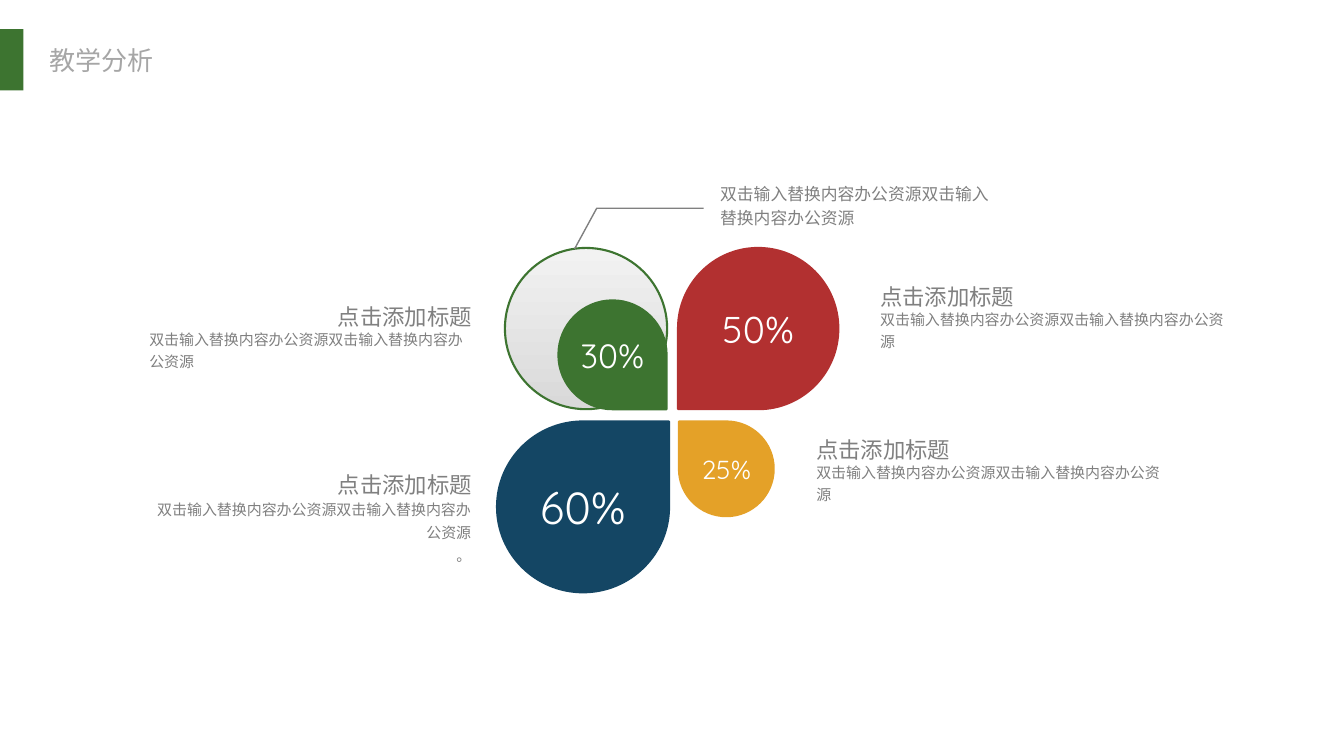
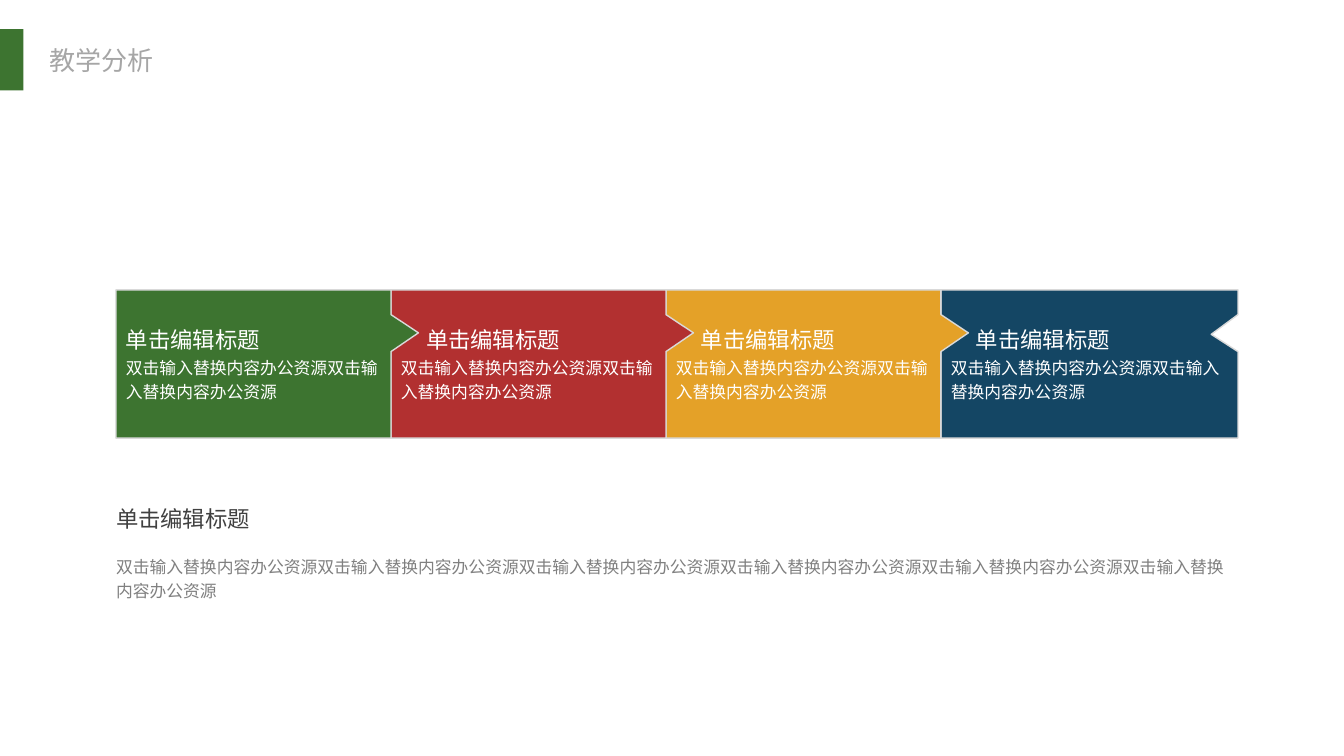
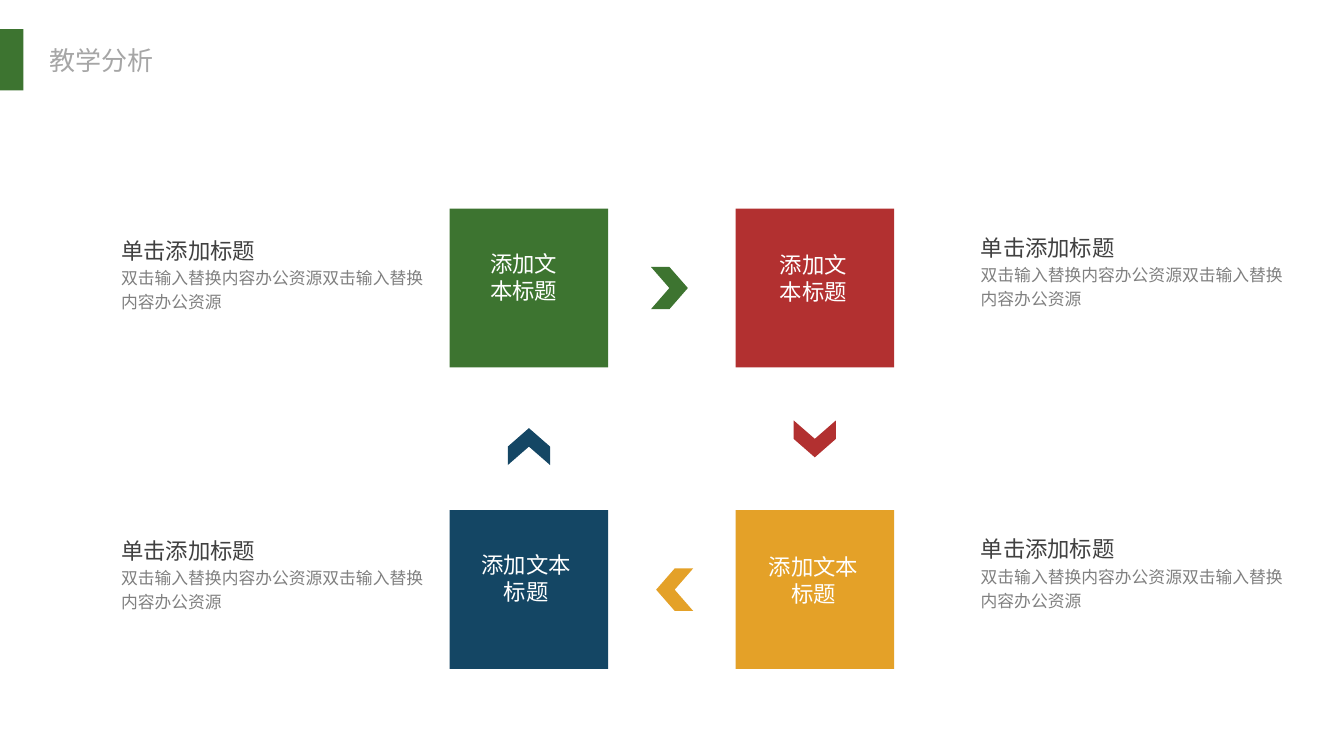
import math
from dataclasses import dataclass

from lxml import etree
from pptx import Presentation
from pptx import util as u
from pptx.dml import color as dml
from pptx.enum import shapes, text
from pptx.oxml import ns

WIDTH, HEIGHT = 40 / 3, 7.5
GREEN, RED, GOLD, NAVY = "3D7430", "B23030", "E4A128", "144664"
WHITE, SILVER, GREY, DARK, PALE = "FFFFFF", "A6A6A6", "808080", "404040", "D9D9D9"
SANS, FIGURES = "Noto Sans CJK SC", "Quicksand"
LEFT, CENTER, RIGHT = text.PP_ALIGN.LEFT, text.PP_ALIGN.CENTER, text.PP_ALIGN.RIGHT
JUSTIFY = text.PP_ALIGN.JUSTIFY
SHAPE = shapes.MSO_SHAPE
ROUNDNESS = 4 / 3 * (math.sqrt(2) - 1)
PHRASE = "双击输入替换内容办公资源"
BODY = PHRASE * 2


@dataclass
class Line:
    words: str
    size: float
    color: str
    align: text.PP_ALIGN = LEFT
    spacing: float = 1.0
    font: str = SANS
    indent: float = 0


def rgb(value):
    return dml.RGBColor.from_string(value)


def across(share):
    return u.Inches(WIDTH * share / 100)


def down(share):
    return u.Inches(HEIGHT * share / 100)


def place(left, top, width, height):
    return across(left), down(top), across(width), down(height)


def write(box, lines, middle=False, wrap=True, margin=0.05):
    frame = box.text_frame
    frame.word_wrap = wrap
    frame.margin_top = frame.margin_bottom = u.Inches(margin)
    frame.vertical_anchor = text.MSO_ANCHOR.MIDDLE if middle else text.MSO_ANCHOR.TOP
    for number, line in enumerate(lines):
        para = frame.add_paragraph() if number else frame.paragraphs[0]
        para.text = line.words
        para.alignment = line.align
        para.line_spacing = line.spacing
        para.font.name = line.font
        para.font.size = u.Pt(line.size)
        para.font.color.rgb = rgb(line.color)
        properties = para._p.get_or_add_pPr()
        if line.indent:
            properties.set("indent", str(across(line.indent)))
        defaults = properties.find(ns.qn("a:defRPr"))
        etree.SubElement(defaults, ns.qn("a:ea"), typeface=SANS)


def add_text(page, area, lines, **options):
    write(page.shapes.add_textbox(*place(*area)), lines, **options)


def paint(shape, fill=None, line=None, weight=1):
    shape.shadow.inherit = False
    if fill:
        shape.fill.solid()
        shape.fill.fore_color.rgb = rgb(fill)
    else:
        shape.fill.background()
    if line:
        shape.line.color.rgb = rgb(line)
        shape.line.width = u.Pt(weight)
    else:
        shape.line.fill.background()


def add_preset(page, kind, area, fill, line=None):
    shape = page.shapes.add_shape(kind, *place(*area))
    paint(shape, fill, line)
    return shape


def add_outline(page, points, close):
    builder = page.shapes.build_freeform(*points[0], scale=1.0)
    builder.add_line_segments(points[1:], close=close)
    return builder.convert_to_shape()


def read_point(segment):
    point = segment.find(ns.qn("a:pt"))
    return int(point.get("x")), int(point.get("y"))


def round_quarters(shape):
    middle = shape.width / 2, shape.height / 2
    segments = list(shape._element.iter(ns.qn("a:lnTo")))[:4]
    ends = [read_point(segment) for segment in segments]
    for segment, start, end in zip(segments[1:], ends, ends[1:]):
        leave = [a + ROUNDNESS * (b - m) for a, b, m in zip(start, end, middle)]
        arrive = [b + ROUNDNESS * (a - m) for a, b, m in zip(start, end, middle)]
        segment.tag = ns.qn("a:cubicBezTo")
        for position, (x, y) in enumerate((leave, arrive)):
            point = etree.Element(ns.qn("a:pt"), x=str(round(x)), y=str(round(y)))
            segment.insert(position, point)


def add_petal(page, area, corner, color, words, size):
    left, top, width, height = place(*area)
    side, end = corner
    stops = (corner, (0, end), (-side, 0), (0, -end), (side, 0))
    points = [(round(left + width * (1 + x) / 2), round(top + height * (1 + y) / 2))
              for x, y in stops]
    petal = add_outline(page, points, True)
    round_quarters(petal)
    paint(petal, color, color, 1.5)
    write(petal, [Line(words, size, WHITE, CENTER, font=FIGURES)], middle=True)


def add_page(deck):
    page = deck.slides.add_slide(deck.slide_layouts[6])
    add_text(page, (2.93, 5.2, 9.4, 5.47),
             [Line("教学分析", 18.6, SILVER, font="Arial")], wrap=False)
    add_preset(page, SHAPE.RECTANGLE, (0, 3.85, 1.75, 8.1), GREEN)
    return page


def add_petal_note(page, left, top, width, body, height=7.07, align=LEFT):
    head_left = left + width - 24.25 if align == RIGHT else left
    add_text(page, (head_left, top, 24.3, 5.33),
             [Line("点击添加标题", 16, GREY, align, 1.5)], margin=0)
    add_text(page, (left, top + 4.3, width, height), body)


def build_petals(deck):
    page = add_page(deck)
    disc = add_preset(page, SHAPE.OVAL, (37.57, 32.8, 12.07, 21.33), GREEN)
    disc.fill.gradient()
    disc.fill.gradient_angle = 90
    for position, color in enumerate((PALE, "F2F2F2")):
        stop = disc.fill.gradient_stops[position]
        stop.color.rgb = rgb(color)
        stop.position = position
    disc.line.color.rgb = rgb(GREEN)
    disc.line.width = u.Pt(1.5)

    for area, corner, color, words, size in (
        ((41.55, 39.73, 8.05, 14.4), (1, 1), GREEN, "30%", 24),
        ((50.45, 32.8, 11.93, 21.33), (-1, 1), RED, "50%", 26.6),
        ((50.52, 55.75, 7.05, 12.53), (-1, -1), GOLD, "25%", 18.6),
        ((36.98, 55.75, 12.8, 22.6), (1, -1), NAVY, "60%", 32),
    ):
        add_petal(page, area, corner, color, words, size)

    plain = [Line(BODY, 10.7, GREY, spacing=1.2)]
    closing = [Line(words, 10.7, GREY, RIGHT, 1.3) for words in (BODY, "。")]
    add_petal_note(page, 60, 55.9, 27.15, plain)
    add_petal_note(page, 10.37, 38.3, 25.43, plain, align=RIGHT)
    add_petal_note(page, 64.75, 35.65, 27.15, plain)
    add_petal_note(page, 10.37, 60.48, 25.43, closing, 10.67, RIGHT)

    bends = ((42.75, 32.93), (44.4, 27.55), (52.35, 27.55))
    leader = add_outline(page, [(across(x), down(y)) for x, y in bends], False)
    paint(leader, line=GREY)
    add_text(page, (52.85, 23.07, 21.98, 7.87), [Line(BODY, 12, GREY, spacing=1.2)])


def build_steps(deck):
    page = add_page(deck)
    pitch = 20.46
    colors = (GREEN, RED, GOLD, NAVY)
    for column in reversed(range(len(colors))):
        last = column == len(colors) - 1
        area = (8.63 + column * pitch, 38.35, 22.1 if last else pitch, 19.6)
        step = add_preset(page, SHAPE.RECTANGULAR_CALLOUT, area, colors[column], PALE)
        tip = (0.41, -0.2) if last else (0.6, -0.21)
        step.adjustments[0], step.adjustments[1] = tip
        write(step, [Line("单击编辑标题", 16, WHITE, indent=1.87 if column else 0),
                     Line(BODY, 12, WHITE, spacing=1.2)], middle=True)
    add_text(page, (7.9, 72.4, 85.13, 19.6), [Line(PHRASE * 6, 12, GREY, spacing=1.2)])
    add_text(page, (7.9, 66.13, 62.55, 4.93), [Line("单击编辑标题", 16, DARK)])


def build_cycle(deck):
    page = add_page(deck)
    for left, top, turn, color in (
        (59.25, 55.25, 90, RED),
        (48.43, 35.3, 0, GREEN),
        (37.98, 56.27, 270, NAVY),
        (48.82, 75.2, 180, GOLD),
    ):
        arrow = add_preset(page, SHAPE.CHEVRON, (left, top, 2.75, 5.6), color)
        arrow.rotation = turn

    columns, rows = (33.45, 54.73), (27.6, 67.47)
    split, whole = ("添加文", "本标题"), ("添加文本标题",)
    for column, row, color, words, label_left, label_width in (
        (0, 0, GREEN, split, 34.63, 8.7),
        (1, 0, RED, split, 56.1, 8.85),
        (0, 1, NAVY, whole, 35.03, 8.25),
        (1, 1, GOLD, whole, 55.73, 9.6),
    ):
        add_preset(page, SHAPE.RECTANGLE, (columns[column], rows[row], 11.8, 21), color)
        area = (label_left, rows[row] + 4.8 + column * 0.2, label_width, 8.53)
        lines = [Line(part, 16, WHITE, CENTER) for part in words]
        if column or row:
            write(add_preset(page, SHAPE.RECTANGLE, area, color), lines)
        else:
            add_text(page, area, lines)

    for left, top, height in ((72.23, 30.27, 16), (8.27, 30.67, 15.6),
                              (72.23, 70.18, 16), (8.27, 70.4, 15.6)):
        add_text(page, (left, top, 24.38, height),
                 [Line("单击添加标题", 16, DARK, JUSTIFY),
                  Line(BODY, 12, GREY, spacing=1.2)])


def main():
    deck = Presentation()
    deck.slide_width, deck.slide_height = u.Inches(WIDTH), u.Inches(HEIGHT)
    build_petals(deck)
    build_steps(deck)
    build_cycle(deck)
    deck.save("out.pptx")


if __name__ == "__main__":
    main()
